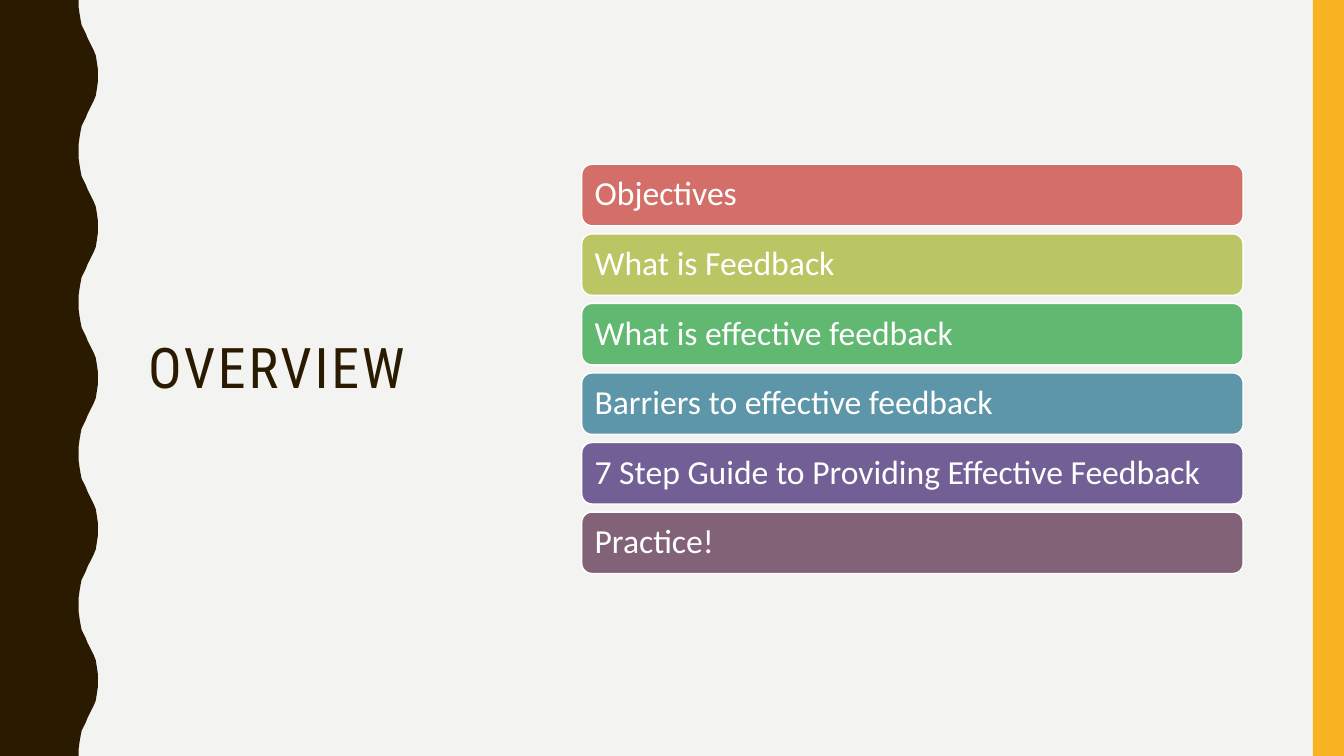
from pptx import Presentation
from pptx.dml.color import RGBColor
from pptx.enum.shapes import MSO_SHAPE
from pptx.enum.text import MSO_ANCHOR, PP_ALIGN
from pptx.util import Inches, Pt

RECTANGLE = MSO_SHAPE.RECTANGLE
ROUNDED = MSO_SHAPE.ROUNDED_RECTANGLE
MIDDLE = MSO_ANCHOR.MIDDLE
LEFT = PP_ALIGN.LEFT

SLIDE_WIDTH, SLIDE_HEIGHT = 13.33, 7.5
COLORS = {
    "background": "F3F3F2",
    "brown": "2A1A00",
    "gold": "F8B323",
    "white": "FFFFFF",
    "red": "D36F68",
    "olive": "BAC663",
    "green": "60B871",
    "blue": "5E96A9",
    "purple": "715F96",
    "mauve": "826276",
}
TOPICS = [
    ("Objectives", "red"),
    ("What is Feedback", "olive"),
    ("What is effective feedback", "green"),
    ("Barriers to effective feedback", "blue"),
    ("7 Step Guide to Providing Effective Feedback", "purple"),
    ("Practice!", "mauve"),
]

# Half a wave: distance out from the trough, distance down
WAVE_PERIOD, WAVE_DEPTH = 1.5, 0.19
HALF_WAVE = [
    (0, 0), (0, 0.07), (0.01, 0.14), (0.02, 0.2), (0.03, 0.25),
    (0.05, 0.29), (0.07, 0.33), (0.09, 0.38), (0.11, 0.42), (0.13, 0.46),
    (0.15, 0.5), (0.17, 0.55), (0.18, 0.61), (0.19, 0.68), (0.19, 0.75),
]


def color(name):
    return RGBColor.from_string(COLORS[name])


def paint(shape, fill, line=None):
    shape.shadow.inherit = False
    shape.fill.solid()
    shape.fill.fore_color.rgb = color(fill)
    if line:
        shape.line.color.rgb = color(line)
        shape.line.width = Pt(1)
    else:
        shape.line.fill.background()


def write(shape, text, font, size, ink):
    frame = shape.text_frame
    frame.word_wrap = True
    frame.vertical_anchor = MIDDLE
    para = frame.paragraphs[0]
    para.alignment = LEFT
    para.line_spacing = 0.9
    span = para.add_run()
    span.text = text
    span.font.name = font
    span.font.size = Pt(size)
    span.font.color.rgb = color(ink)
    return span


def add_wavy_edge(page, left, top, width, height):
    trough = left + width - WAVE_DEPTH
    wave = HALF_WAVE + [(out, WAVE_PERIOD - down)
                        for out, down in reversed(HALF_WAVE[:-1])]
    points = [(trough + out, top + cycle * WAVE_PERIOD + down)
              for cycle in range(round(height / WAVE_PERIOD))
              for out, down in wave]
    points.append((left, top + height))
    builder = page.shapes.build_freeform(Inches(left), Inches(top))
    builder.add_line_segments([(Inches(x), Inches(y)) for x, y in points], close=True)
    paint(builder.convert_to_shape(), "brown")


def add_side_bar(page, left, top, width, height):
    bar = page.shapes.add_shape(
        RECTANGLE, Inches(left), Inches(top), Inches(width), Inches(height))
    paint(bar, "gold")


def add_title(page, left, top, width, height):
    box = page.shapes.add_textbox(
        Inches(left), Inches(top), Inches(width), Inches(height))
    span = write(box, "OVERVIEW", "Roboto Condensed", 40, "brown")
    span.font._element.set("spc", "200")  # letter spacing of 2 pt


def add_topics(page, left, top, width, height, gap=0.08):
    bar_height = (height - gap * (len(TOPICS) - 1)) / len(TOPICS)
    for index, (text, fill) in enumerate(TOPICS):
        bar_top = top + index * (bar_height + gap)
        bar = page.shapes.add_shape(
            ROUNDED, Inches(left), Inches(bar_top), Inches(width), Inches(bar_height))
        paint(bar, fill, "white")
        write(bar, text, "Calibri", 24, "white")


def build_overview(deck):
    page = deck.slides.add_slide(deck.slide_layouts[6])
    page.background.fill.solid()
    page.background.fill.fore_color.rgb = color("background")
    # Frame
    add_wavy_edge(page, 0, 0, 0.97, SLIDE_HEIGHT)
    add_side_bar(page, SLIDE_WIDTH - 0.31, 0, 0.31, SLIDE_HEIGHT)
    # Content
    add_title(page, 1.37, 0.71, 3.7, 5.93)
    add_topics(page, 5.77, 1.63, 6.56, 4.06)


def main():
    deck = Presentation()
    deck.slide_width = Inches(SLIDE_WIDTH)
    deck.slide_height = Inches(SLIDE_HEIGHT)
    build_overview(deck)
    deck.save("out.pptx")


if __name__ == "__main__":
    main()
